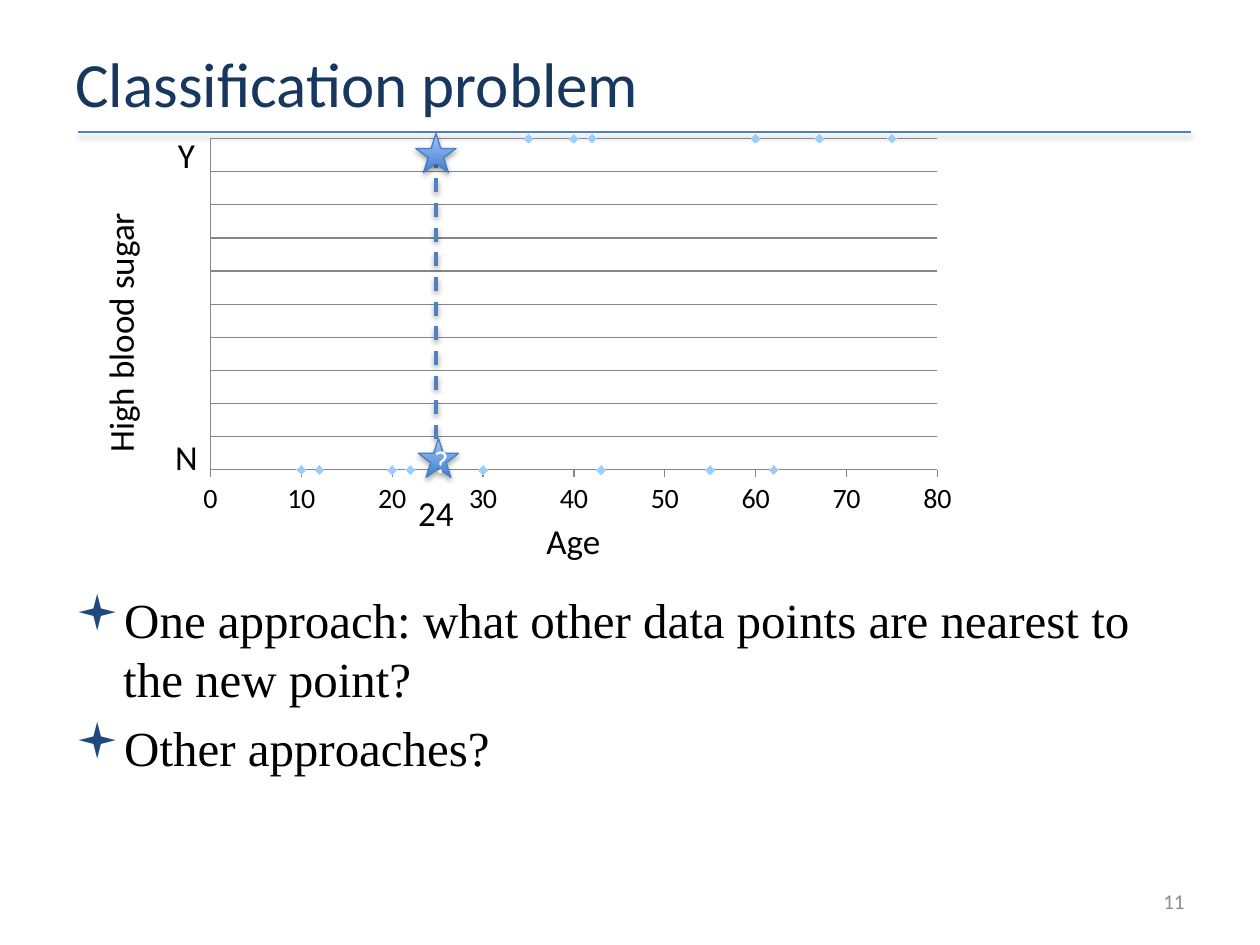
from dataclasses import dataclass, field
from typing import Any

import pptx
import pptx.chart.data
import pptx.dml.color
import pptx.enum.chart
import pptx.enum.dml
import pptx.enum.shapes
import pptx.enum.text
import pptx.oxml
import pptx.oxml.ns
import pptx.util
from pptx.util import Inches

ALIGN = pptx.enum.text.PP_ALIGN
ANCHOR = pptx.enum.text.MSO_ANCHOR


@dataclass(frozen=True)
class Theme:
    title: str = "17375E"
    text: str = "000000"
    bullet: str = "1F497D"
    page_number: str = "8C8C8C"
    line: str = "4F81BD"
    axis: str = "868686"
    marker: str = "99CCFF"
    star_dark: str = "3F80CE"
    star_light: str = "A4C4FF"
    star_line: str = "4B7EBC"
    star_text: str = "FFFFFF"
    font: str = "Calibri"
    body_font: str = "Times New Roman"
    bullet_font: str = "Wingdings"
    title_size: int = 36
    body_size: int = 28
    label_size: int = 20
    star_size: int = 18
    axis_size: int = 16
    small_size: int = 12


THEME = Theme()


@dataclass(frozen=True)
class Label:
    text: str
    left: float
    top: float
    width: float
    height: float = 0.44
    size: int = THEME.label_size
    color: str = THEME.text
    font: str = THEME.font
    rotation: int = 0
    frame: dict[str, Any] = field(default_factory=dict)
    paragraph: dict[str, Any] = field(default_factory=lambda: {"alignment": ALIGN.CENTER})


LABELS = (
    Label("Classification problem", 0.5, 0.3, 9, 0.71, THEME.title_size, THEME.title,
          frame={"vertical_anchor": ANCHOR.MIDDLE}, paragraph={"alignment": ALIGN.LEFT}),
    Label("11", 7.17, 6.95, 2.33, 0.4, THEME.small_size, THEME.page_number,
          frame={"vertical_anchor": ANCHOR.MIDDLE}, paragraph={"alignment": ALIGN.RIGHT}),
    Label("High blood sugar", -0.38, 2.42, 2.67, rotation=270),
    Label("N", 1.27, 3.41, 0.42),
    Label("Y", 1.27, 1.01, 0.42),
    Label("Age", 4.06, 4.07, 0.98),
    Label("24", 2.97, 3.85, 0.98),
)
BODY = Label("One approach: what other data points are nearest to the new point?\n"
             "Other approaches?",
             0.5, 4.63, 9, 2.07, THEME.body_size, font=THEME.body_font,
             paragraph={"space_before": pptx.util.Pt(5.6)})
AGES = (10, 20, 22, 12, 35, 55, 67, 43, 42, 60, 30, 40, 62, 75)
AGES_WITH_HIGH_SUGAR = {35, 67, 42, 60, 40, 75}
CHART_WIDTH, CHART_HEIGHT = 6.19, 3.12


def rgb(color: str) -> pptx.dml.color.RGBColor:
    return pptx.dml.color.RGBColor.from_string(color)


def set_format(target: Any, values: dict[str, Any]) -> None:
    for name, value in values.items():
        setattr(target, name, value)


def set_font(font: Any, name: str, size: int, color: str) -> None:
    set_format(font, {"name": name, "size": pptx.util.Pt(size)})
    font.color.rgb = rgb(color)


def set_line(line: Any, color: str, width: float) -> None:
    line.color.rgb = rgb(color)
    line.width = pptx.util.Pt(width)


def add_shadow(shape: Any, distance: float, opacity: int) -> None:
    """Give the shape a soft shadow straight below it."""
    shape._element.spPr.append(pptx.oxml.parse_xml(
        f'<a:effectLst {pptx.oxml.ns.nsdecls("a")}>'
        f'<a:outerShdw blurRad="{pptx.util.Pt(3.1)}" dist="{pptx.util.Pt(distance)}" '
        f'dir="5400000" rotWithShape="0"><a:srgbClr val="000000">'
        f'<a:alpha val="{opacity * 1000}"/></a:srgbClr></a:outerShdw></a:effectLst>'))


def add_label(slide: Any, label: Label) -> Any:
    shape = slide.shapes.add_textbox(Inches(label.left), Inches(label.top),
                                     Inches(label.width), Inches(label.height))
    shape.rotation = label.rotation
    set_format(shape.text_frame, {"word_wrap": True, "text": label.text, **label.frame})
    for paragraph in shape.text_frame.paragraphs:
        set_format(paragraph, label.paragraph)
        for run in paragraph.runs:
            set_font(run.font, label.font, label.size, label.color)
    return shape


def add_bullets(shape: Any) -> None:
    for paragraph in shape.text_frame.paragraphs:
        properties = paragraph._p.get_or_add_pPr()
        properties.set("marL", str(Inches(0.38)))
        properties.set("indent", str(-Inches(0.38)))
        for xml in (f'<a:buClr {{}}><a:srgbClr val="{THEME.bullet}"/></a:buClr>',
                    f'<a:buFont {{}} typeface="{THEME.bullet_font}" charset="2"/>',
                    '<a:buChar {} char="▪"/>'):
            properties.append(pptx.oxml.parse_xml(xml.format(pptx.oxml.ns.nsdecls("a"))))


def add_line(slide: Any, start: tuple[float, float], end: tuple[float, float],
             width: float) -> Any:
    connector = slide.shapes.add_connector(
        pptx.enum.shapes.MSO_CONNECTOR.STRAIGHT, *map(Inches, start + end))
    set_line(connector.line, THEME.line, width)
    add_shadow(connector, 1.6, 38)
    return connector


def add_star(slide: Any, left: float, top: float, text: str = "") -> None:
    star = slide.shapes.add_shape(pptx.enum.shapes.MSO_SHAPE.STAR_5_POINT, Inches(left),
                                  Inches(top), Inches(0.32), Inches(0.31))
    star.fill.gradient()
    star.fill.gradient_angle = 90
    for stop, color in zip(star.fill.gradient_stops, (THEME.star_dark, THEME.star_light)):
        stop.color.rgb = rgb(color)
    set_line(star.line, THEME.star_line, 0.75)
    add_shadow(star, 1.8, 35)
    if text:
        set_format(star.text_frame, {"text": text, "vertical_anchor": ANCHOR.MIDDLE})
        paragraph = star.text_frame.paragraphs[0]
        paragraph.alignment = ALIGN.CENTER
        set_font(paragraph.runs[0].font, THEME.font, THEME.star_size, THEME.star_text)


def set_plot_layout(chart: Any, **fractions: float) -> None:
    """Fix the inner plot area as fractions of the chart's size."""
    plot_area = chart._chartSpace.chart.plotArea
    for layout in plot_area.findall(pptx.oxml.ns.qn("c:layout")):
        plot_area.remove(layout)
    values = "".join(f'<c:{name} val="{value}"/>' for name, value in fractions.items())
    plot_area.insert(0, pptx.oxml.parse_xml(
        f'<c:layout {pptx.oxml.ns.nsdecls("c")}><c:manualLayout>'
        '<c:layoutTarget val="inner"/><c:xMode val="edge"/><c:yMode val="edge"/>'
        f'{values}</c:manualLayout></c:layout>'))


def add_age_chart(slide: Any) -> None:
    data = pptx.chart.data.XyChartData()
    points = data.add_series("Series 1")
    for age in AGES:
        points.add_data_point(age, 100 if age in AGES_WITH_HIGH_SUGAR else 0)
    chart = slide.shapes.add_chart(
        pptx.enum.chart.XL_CHART_TYPE.XY_SCATTER, Inches(1.49), Inches(1.04),
        Inches(CHART_WIDTH), Inches(CHART_HEIGHT), data).chart
    set_format(chart, {"has_legend": False, "has_title": False})
    set_font(chart.font, THEME.font, THEME.axis_size, THEME.text)
    tick = pptx.enum.chart.XL_TICK_MARK
    position = pptx.enum.chart.XL_TICK_LABEL_POSITION
    for axis, maximum, grid, mark, labels in (
            (chart.category_axis, 80, False, tick.OUTSIDE, position.NEXT_TO_AXIS),
            (chart.value_axis, 100, True, tick.NONE, position.NONE)):
        set_format(axis, {"minimum_scale": 0, "maximum_scale": maximum, "major_unit": 10,
                          "has_major_gridlines": grid, "major_tick_mark": mark,
                          "minor_tick_mark": tick.NONE, "tick_label_position": labels})
        set_line(axis.format.line, THEME.axis, 0.7)
    set_line(chart.value_axis.major_gridlines.format.line, THEME.axis, 0.7)
    chart.plots[0].vary_by_categories = False
    series = chart.plots[0].series[0]
    series.smooth = False
    series.format.line.fill.background()
    set_format(series.marker, {"style": pptx.enum.chart.XL_MARKER_STYLE.DIAMOND, "size": 5})
    series.marker.format.fill.solid()
    series.marker.format.fill.fore_color.rgb = rgb(THEME.marker)
    series.marker.format.line.fill.background()
    set_plot_layout(chart, x=0.18 / CHART_WIDTH, y=0.06 / CHART_HEIGHT,
                    w=5.77 / CHART_WIDTH, h=2.63 / CHART_HEIGHT)


def main() -> None:
    presentation = pptx.Presentation()
    set_format(presentation, {"slide_width": Inches(10), "slide_height": Inches(7.5)})
    slide = presentation.slides.add_slide(presentation.slide_layouts[6])
    add_line(slide, (0.62, 1.05), (9.45, 1.05), 1)
    add_age_chart(slide)
    for label in LABELS:
        add_label(slide, label)
    add_bullets(add_label(slide, BODY))
    new_point = add_line(slide, (3.46, 1.22), (3.46, 3.65), 2)
    new_point.line.dash_style = pptx.enum.dml.MSO_LINE.DASH
    add_star(slide, 3.32, 3.48, "?")
    add_star(slide, 3.3, 1.06)
    presentation.save("out.pptx")


if __name__ == "__main__":
    main()
